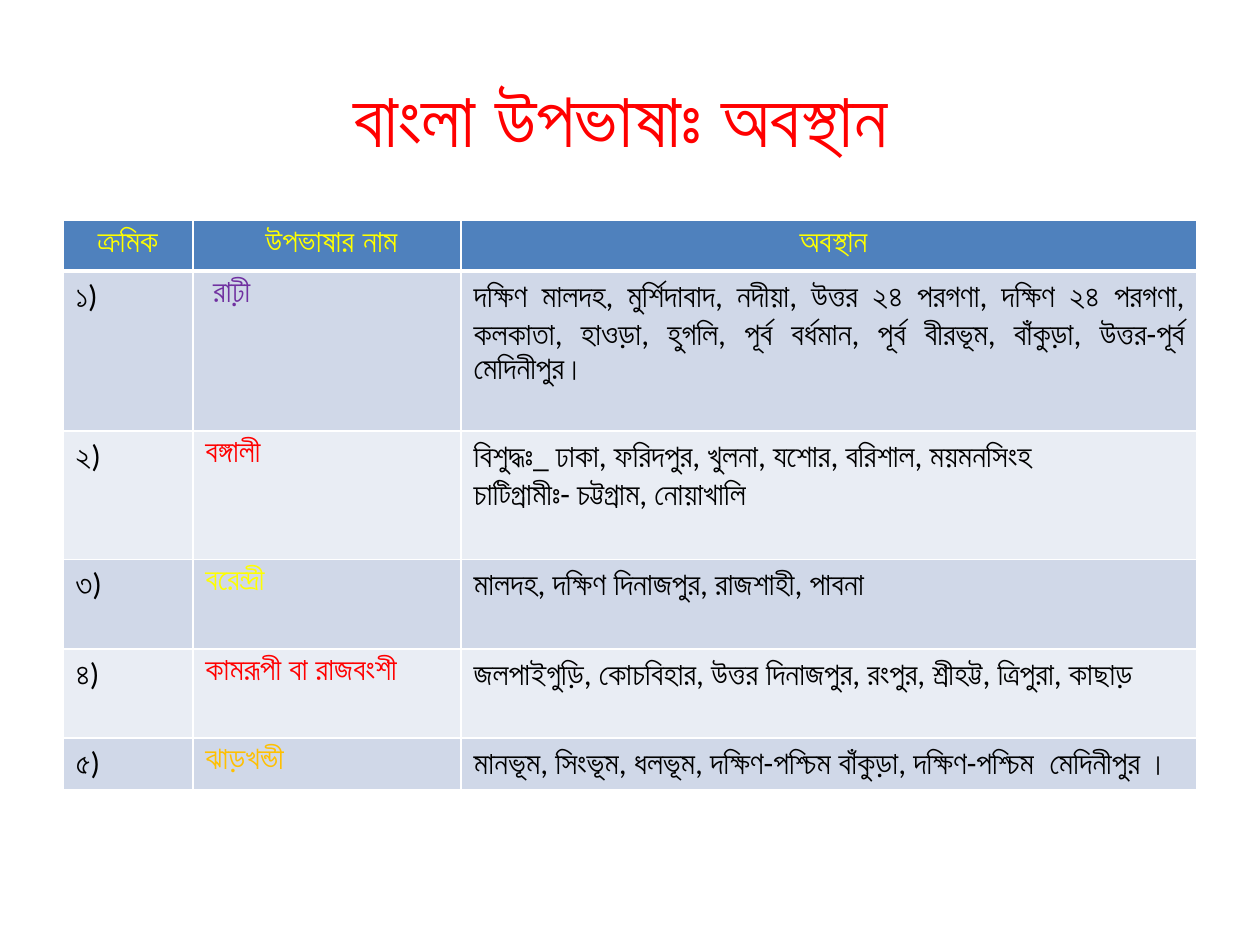
from lxml import etree
from pptx import Presentation
from pptx.dml.color import RGBColor
from pptx.enum.text import MSO_ANCHOR, PP_ALIGN
from pptx.oxml.ns import qn
from pptx.util import Inches, Pt

CENTER, JUSTIFY, LEFT = PP_ALIGN.CENTER, PP_ALIGN.JUSTIFY, PP_ALIGN.LEFT
MIDDLE = MSO_ANCHOR.MIDDLE
TITLE_ONLY = 5

COLORS = {
    "header": "4F81BD", "band_dark": "D0D8E8", "band_light": "E9EDF4",
    "white": "FFFFFF", "black": "000000", "red": "FF0000",
    "yellow": "FFFF00", "purple": "7030A0", "orange": "FFC000",
}

TITLE = "বাংলা উপভাষাঃ অবস্থান "
HEADERS = ["ক্রমিক", " উপভাষার নাম", " অবস্থান"]
# serial, dialect, dialect colour, places, alignment of places
DIALECTS = [
    ("১)", " রাঢ়ী", "purple",
     "দক্ষিণ মালদহ, মুর্শিদাবাদ, নদীয়া, উত্তর ২৪ পরগণা, দক্ষিণ ২৪ পরগণা, "
     "কলকাতা, হাওড়া, হুগলি, পূর্ব বর্ধমান, পূর্ব বীরভূম, বাঁকুড়া, "
     "উত্তর-পূর্ব মেদিনীপুর। ", JUSTIFY),
    ("২)", "বঙ্গালী", "red",
     "বিশুদ্ধঃ_ ঢাকা, ফরিদপুর, খুলনা, যশোর, বরিশাল, ময়মনসিংহ\n"
     "চাটিগ্রামীঃ- চট্টগ্রাম, নোয়াখালি", LEFT),
    ("৩)", "বরেন্দ্রী", "yellow",
     "মালদহ, দক্ষিণ দিনাজপুর, রাজশাহী, পাবনা", LEFT),
    ("৪)", "কামরূপী বা রাজবংশী", "red",
     "জলপাইগুড়ি, কোচবিহার, উত্তর দিনাজপুর, রংপুর, শ্রীহট্ট, ত্রিপুরা, কাছাড়", LEFT),
    ("৫)", "ঝাড়খন্ডী", "orange",
     "মানভূম, সিংভূম, ধলভূম, দক্ষিণ-পশ্চিম বাঁকুড়া, দক্ষিণ-পশ্চিম  মেদিনীপুর ।", LEFT),
]
COL_WIDTHS = [1.03, 2.13, 5.84]
ROW_HEIGHTS = [0.4, 1.27, 1.02, 0.71, 0.71, 0.4]


class SlideBuilder:
    font = "Calibri"
    body_size = 18
    title_size = 44

    def __init__(self, prs):
        self.s = prs.slides.add_slide(prs.slide_layouts[TITLE_ONLY])

    def text(self, tf, text, color, size, align=LEFT, bold=False):
        """Fill a text frame, one paragraph for each line of text."""
        style = {"name": self.font, "size": Pt(size), "bold": bold}
        for i, line in enumerate(text.split("\n")):
            p = tf.add_paragraph() if i else tf.paragraphs[0]
            p.alignment = align
            r = p.add_run()
            r.text = line
            for key, value in style.items():
                setattr(r.font, key, value)
            r.font.color.rgb = RGBColor.from_string(COLORS[color])

    def title(self, text, box):
        sp = self.s.shapes.title
        for key, value in zip(("left", "top", "width", "height"), box):
            setattr(sp, key, Inches(value))
        sp.text_frame.vertical_anchor = MIDDLE
        self.text(sp.text_frame, text, "red", self.title_size, CENTER)

    def borders(self, cell, top, bottom):
        """Draw white cell borders; top and bottom are widths in points."""
        tc_pr = cell._tc.get_or_add_tcPr()
        for side, width in (("L", 1), ("R", 1), ("T", top), ("B", bottom)):
            ln = etree.SubElement(tc_pr, qn(f"a:ln{side}"), w=str(Pt(width)))
            fill = etree.SubElement(ln, qn("a:solidFill"))
            etree.SubElement(fill, qn("a:srgbClr"), val=COLORS["white"])

    def cell(self, cell, row, text, color, align=LEFT):
        header = row == 0
        self.borders(cell, 3 if row == 1 else 1, 3 if header else 1)
        band = "header" if header else "band_dark" if row % 2 else "band_light"
        cell.fill.solid()
        cell.fill.fore_color.rgb = RGBColor.from_string(COLORS[band])
        self.text(cell.text_frame, text, color, self.body_size, align, header)

    def table(self, rows, left, top):
        """Add a table; each row is a list of (text, colour, alignment)."""
        table = self.s.shapes.add_table(
            len(rows), len(COL_WIDTHS), Inches(left), Inches(top),
            Inches(sum(COL_WIDTHS)), Inches(sum(ROW_HEIGHTS))).table
        for col, width in zip(table.columns, COL_WIDTHS):
            col.width = Inches(width)
        for i, (row, height) in enumerate(zip(rows, ROW_HEIGHTS)):
            table.rows[i].height = Inches(height)
            for j, content in enumerate(row):
                self.cell(table.cell(i, j), i, *content)


def main():
    prs = Presentation()
    prs.slide_width, prs.slide_height = Inches(10), Inches(7.5)
    slide = SlideBuilder(prs)
    slide.title(TITLE, (0.5, 0.3, 9, 1.25))
    rows = [[(text, "yellow", CENTER) for text in HEADERS]]
    for serial, name, color, places, align in DIALECTS:
        rows.append([(serial, "black"), (name, color), (places, "black", align)])
    slide.table(rows, 0.5, 1.75)
    prs.save("out.pptx")


if __name__ == "__main__":
    main()
